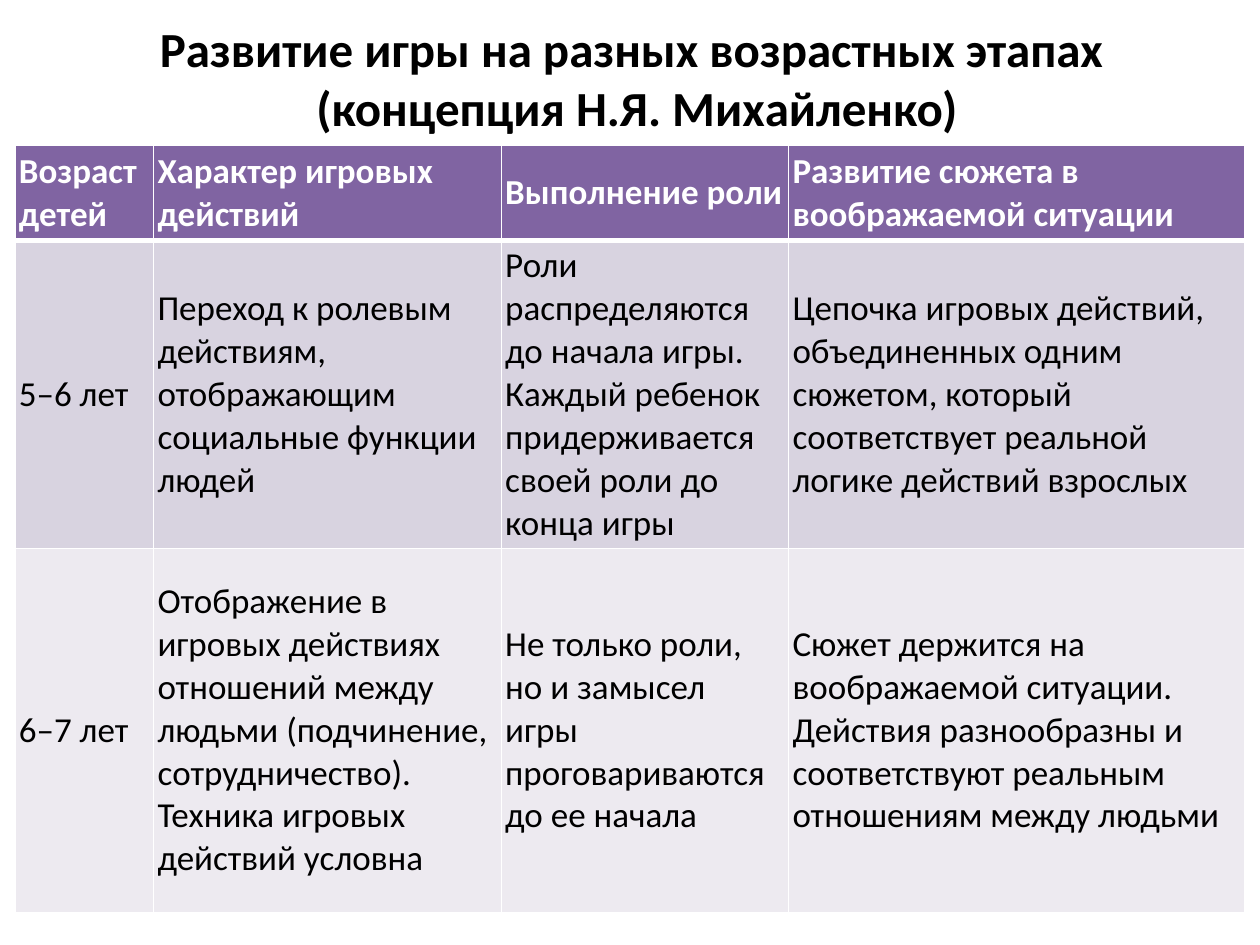
from lxml.etree import SubElement
from pptx import Presentation
from pptx.dml.color import RGBColor
from pptx.enum.text import MSO_ANCHOR as Anchor, PP_ALIGN as Align
from pptx.oxml.ns import qn
from pptx.util import Inches, Pt

BLACK = RGBColor(0x00, 0x00, 0x00)
WHITE = RGBColor(0xFF, 0xFF, 0xFF)
PURPLE = RGBColor(0x80, 0x64, 0xA2)
LILAC = RGBColor(0xD8, 0xD3, 0xE0)
PALE_LILAC = RGBColor(0xED, 0xEA, 0xF0)

TITLE = "Развитие игры на разных возрастных этапах\n (концепция Н.Я. Михайленко)"
COLUMN_WIDTHS = [1.1, 2.76, 2.28, 3.62]
ROW_HEIGHTS = [0.76, 2.41, 2.89]
ROW_FILLS = [PURPLE, LILAC, PALE_LILAC]
ROWS = [
    [
        "Возраст детей",
        "Характер игровых действий",
        "Выполнение роли",
        "Развитие сюжета в воображаемой ситуации",
    ],
    [
        "5–6 лет",
        "Переход к ролевым действиям, отображающим социальные функции людей",
        "Роли распределяются до начала игры. Каждый ребенок придерживается "
        "своей роли до конца игры",
        "Цепочка игровых действий, объединенных одним сюжетом, который "
        "соответствует реальной логике действий взрослых",
    ],
    [
        "6–7 лет",
        "Отображение в игровых действиях отношений между людьми (подчинение, "
        "сотрудничество). Техника игровых действий условна",
        "Не только роли, но и замысел игры проговариваются до ее начала",
        "Сюжет держится на воображаемой ситуации. Действия разнообразны "
        "и соответствуют реальным отношениям между людьми",
    ],
]


def write_text(text_frame, text, size=20, color=BLACK, bold=False, align=Align.LEFT):
    """Put one formatted paragraph into a text frame."""
    paragraph = text_frame.paragraphs[0]
    paragraph.text = text.replace("\n", "\v")
    paragraph.alignment = align
    for run in paragraph.runs:
        run.font.name = "Calibri"
        run.font.size = Pt(size)
        run.font.bold = bold
        run.font.color.rgb = color


def set_borders(cell, bottom):
    """Draw white borders around a cell, with its own bottom width."""
    properties = cell._tc.get_or_add_tcPr()
    for side, width in (("L", 1), ("R", 1), ("T", 1), ("B", bottom)):
        line = SubElement(properties, qn(f"a:ln{side}"), w=str(Pt(width)))
        fill = SubElement(line, qn("a:solidFill"))
        SubElement(fill, qn("a:srgbClr"), val=str(WHITE))


def format_cell(cell, text, fill, header):
    """Fill one table cell with its text, borders and colour."""
    cell.margin_left = cell.margin_right = Inches(0.03)
    cell.margin_top = cell.margin_bottom = Inches(0.03)
    cell.vertical_anchor = Anchor.MIDDLE
    set_borders(cell, bottom=3 if header else 1)
    cell.fill.solid()
    cell.fill.fore_color.rgb = fill
    write_text(cell.text_frame, text, color=WHITE if header else BLACK, bold=header)


def add_title(slide):
    """Place and format the slide title."""
    title = slide.shapes.title
    title.left, title.top = Inches(0.51), Inches(-0.01)
    title.width, title.height = Inches(9), Inches(1.25)
    title.text_frame.vertical_anchor = Anchor.MIDDLE
    write_text(title.text_frame, TITLE, size=28, bold=True, align=Align.CENTER)


def add_stages_table(slide):
    """Add the table of play stages by age."""
    table = slide.shapes.add_table(
        len(ROWS), len(COLUMN_WIDTHS), Inches(0.12), Inches(1.15),
        Inches(sum(COLUMN_WIDTHS)), Inches(sum(ROW_HEIGHTS)),
    ).table
    for column, width in zip(table.columns, COLUMN_WIDTHS):
        column.width = Inches(width)
    for index, (row, height) in enumerate(zip(table.rows, ROW_HEIGHTS)):
        row.height = Inches(height)
        for cell, text in zip(row.cells, ROWS[index]):
            format_cell(cell, text, ROW_FILLS[index], header=index == 0)


def main():
    """Build and save the presentation."""
    presentation = Presentation()
    presentation.slide_width, presentation.slide_height = Inches(10), Inches(7.5)
    slide = presentation.slides.add_slide(presentation.slide_layouts[5])
    add_title(slide)
    add_stages_table(slide)
    presentation.save("out.pptx")


if __name__ == "__main__":
    main()
